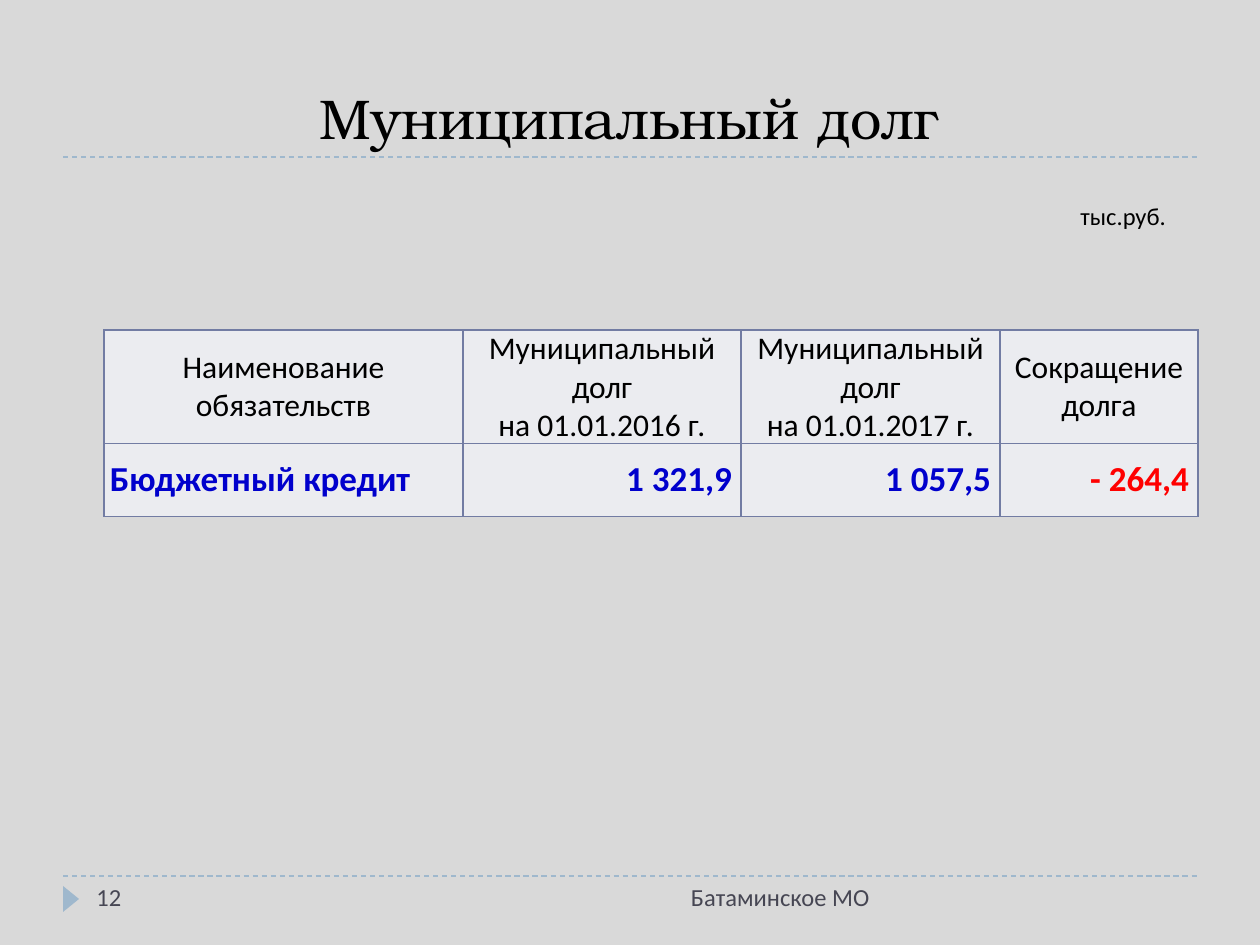
"""Build the municipal debt slide with its table of obligations."""
from dataclasses import dataclass

from lxml import etree
from pptx import Presentation
from pptx.dml.color import RGBColor
from pptx.enum import dml, shapes, text
from pptx.oxml import ns
from pptx.util import Emu, Pt

LEFT, CENTER, RIGHT = text.PP_ALIGN.LEFT, text.PP_ALIGN.CENTER, text.PP_ALIGN.RIGHT
TOP, MIDDLE, BOTTOM = text.MSO_ANCHOR.TOP, text.MSO_ANCHOR.MIDDLE, text.MSO_ANCHOR.BOTTOM


@dataclass(frozen=True)
class Theme:
    background: str = "D9D9D9"
    accent: str = "9FB8CD"
    border: str = "727CA3"
    cell: str = "EBECF0"
    ink: str = "000000"
    muted: str = "464653"
    debt: str = "0000CC"
    cut: str = "FF0000"
    heading: str = "TeX Gyre Bonum"
    body: str = "Calibri"
    title_size: int = 32
    value_size: int = 20
    header_size: int = 18
    small_size: int = 14


theme = Theme()


def px(*lengths):
    return [Emu(round(length * 914400 / 126)) for length in lengths]


def write(frame, words, size=theme.small_size, color=theme.ink, font=theme.body,
          bold=False, align=LEFT, anchor=TOP):
    frame.word_wrap = True
    frame.vertical_anchor = anchor
    frame.text = words
    for paragraph in frame.paragraphs:
        paragraph.alignment = align
        paragraph.font.name = font
        paragraph.font.size = Pt(size)
        paragraph.font.bold = bold
        paragraph.font.color.rgb = RGBColor.from_string(color)


deck = Presentation()
deck.slide_width, deck.slide_height = px(1260, 945)
slide = deck.slides.add_slide(deck.slide_layouts[5])
slide.background.fill.solid()
slide.background.fill.fore_color.rgb = RGBColor.from_string(theme.background)

for rule_y in (876, 157):
    rule = slide.shapes.add_connector(
        shapes.MSO_CONNECTOR.STRAIGHT, *px(63, rule_y, 1197, rule_y))
    rule.line.color.rgb = RGBColor.from_string(theme.accent)
    rule.line.width = Pt(0.75)
    rule.line.dash_style = dml.MSO_LINE.DASH
    etree.SubElement(rule._element.spPr, ns.qn("a:effectLst"))

page_marker = slide.shapes.add_shape(
    shapes.MSO_SHAPE.ISOSCELES_TRIANGLE, *px(58, 891, 26, 16))
page_marker.rotation = 90
page_marker.shadow.inherit = False
page_marker.fill.solid()
page_marker.fill.fore_color.rgb = RGBColor.from_string(theme.accent)
page_marker.line.fill.background()

heading = slide.shapes.title
heading.left, heading.top, heading.width, heading.height = px(63, 21, 1134, 136)
heading.text_frame.auto_size = text.MSO_AUTO_SIZE.NONE
write(heading.text_frame, "Муниципальный долг", size=theme.title_size,
      font=theme.heading, align=CENTER, anchor=BOTTOM)

for words, place, color, align in (
    ("12", (84, 876, 273, 50), theme.muted, LEFT),
    ("тыс.руб.", (1068, 195, 179, 43), theme.ink, LEFT),
    ("Батаминское МО", (399, 876, 483, 50), theme.muted, RIGHT),
):
    label = slide.shapes.add_textbox(*px(*place))
    write(label.text_frame, words, color=color, align=align)

headers = ("Наименование обязательств", "Муниципальный долг\nна 01.01.2016 г.",
           "Муниципальный долг\nна 01.01.2017 г.", "Сокращение долга")
credit = ("Бюджетный кредит", "1 321,9", "1 057,5", "- 264,4")
column_widths = px(359, 278, 259, 198)
row_heights = px(113, 73)
debts = slide.shapes.add_table(2, 4, *px(104, 330), sum(column_widths), sum(row_heights)).table
debts.first_row = debts.horz_banding = False
for column, width in zip(debts.columns, column_widths):
    column.width = width
for row, height in zip(debts.rows, row_heights):
    row.height = height

for row, entries in enumerate((headers, credit)):
    for column, words in enumerate(entries):
        cell = debts.cell(row, column)
        is_value = row == 1 and column > 0
        cell.margin_left = cell.margin_right = px(9 if is_value else 6)[0]
        cell.margin_top = cell.margin_bottom = 0
        cell.vertical_anchor = MIDDLE
        if row == 0:
            write(cell.text_frame, words, size=theme.header_size, align=CENTER, anchor=None)
        else:
            write(cell.text_frame, words, size=theme.value_size, bold=True,
                  color=theme.cut if column == 3 else theme.debt,
                  align=RIGHT if is_value else LEFT, anchor=None)
        cell_format = cell._tc.get_or_add_tcPr()
        for side in ("a:lnL", "a:lnR", "a:lnT", "a:lnB"):
            edge = etree.SubElement(cell_format, ns.qn(side), w=str(Pt(1)))
            paint = etree.SubElement(edge, ns.qn("a:solidFill"))
            etree.SubElement(paint, ns.qn("a:srgbClr"), val=theme.border)
        cell.fill.solid()
        cell.fill.fore_color.rgb = RGBColor.from_string(theme.cell)

deck.save("out.pptx")
